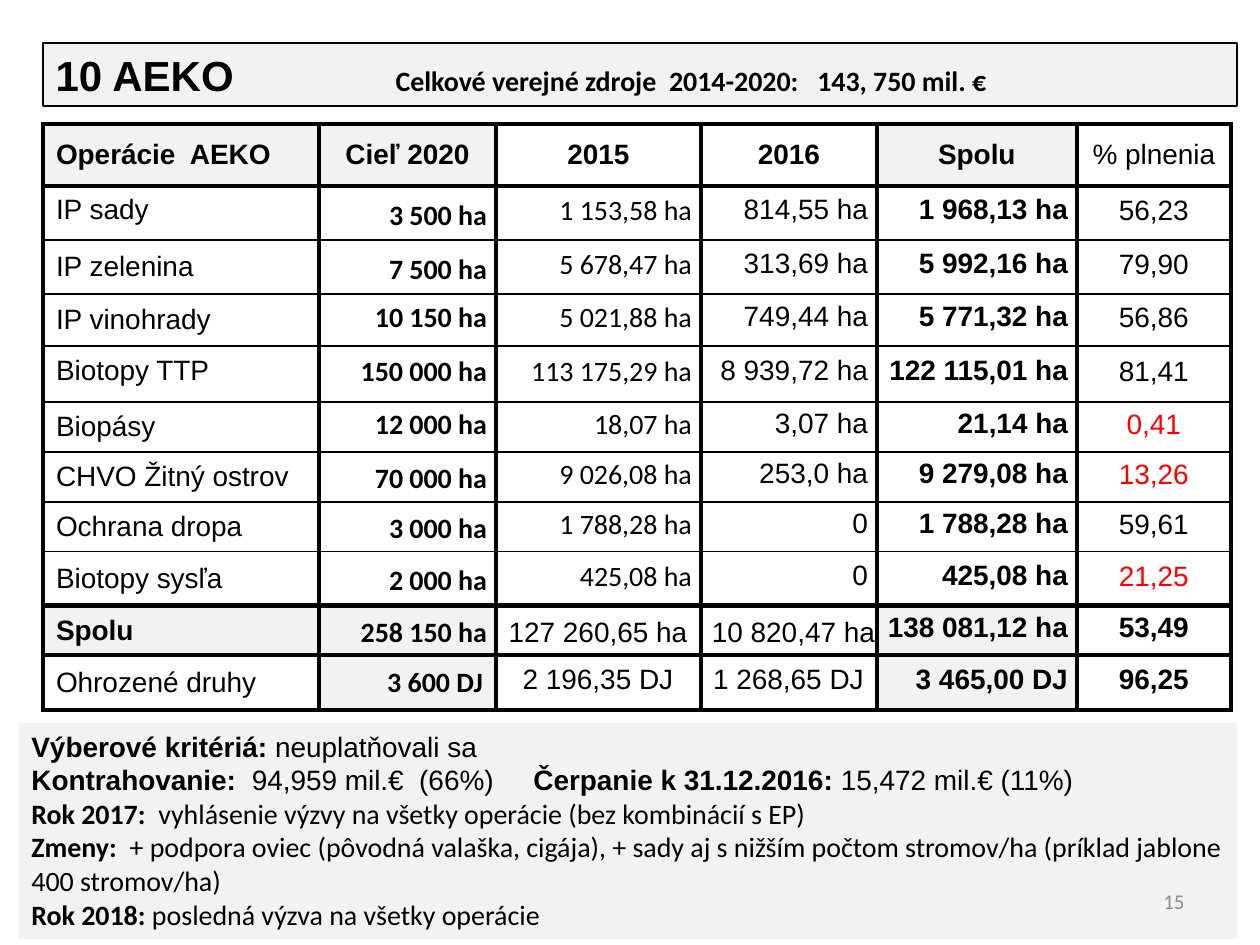
from dataclasses import dataclass, field, replace

from lxml import etree
from pptx import Presentation
from pptx import util as u
from pptx.dml.color import RGBColor
from pptx.enum import shapes, text
from pptx.oxml.ns import qn

EMU_PER_PX = 914400 / 126
COLORS = {"ink": "000000", "panel": "F2F2F2", "alert": "FF0000", "muted": "8C8C8C"}
LEFT, CENTER, RIGHT = text.PP_ALIGN.LEFT, text.PP_ALIGN.CENTER, text.PP_ALIGN.RIGHT
TOP, MIDDLE = text.MSO_ANCHOR.TOP, text.MSO_ANCHOR.MIDDLE

WIDE = (13, 6, 13, 6)  # cell margins: left, top, right, bottom
NARROW = (8, 5, 9, 5)
THIN = (1, 1, 1, 0)


@dataclass(frozen=True)
class Style:
    align: int = LEFT
    font: str = "Arial"
    bold: bool = False
    spacing: float = 1.0
    before: float = 3.2
    margins: tuple = WIDE
    color: str = "ink"
    fill: str = ""


@dataclass(frozen=True)
class Row:
    height: int
    cells: tuple
    changes: dict = field(default_factory=dict)  # column -> style overrides


COLUMN_WIDTHS = (276, 177, 205, 176, 200, 154)
HEADER = Style(CENTER, bold=True)
HEADER_STYLES = (replace(HEADER, align=LEFT, fill="panel"), replace(HEADER, fill="panel"),
                 HEADER, HEADER, replace(HEADER, fill="panel"), replace(HEADER, bold=False))
AMOUNT = Style(RIGHT, spacing=0.75, before=4.5, margins=NARROW)
BODY_STYLES = (
    Style(),
    replace(AMOUNT, font="Calibri", bold=True, spacing=1.15),
    replace(AMOUNT, font="Calibri"),
    AMOUNT,
    replace(AMOUNT, bold=True, before=3.2),
    replace(AMOUNT, align=CENTER, margins=THIN),
)
TIGHT = {"spacing": 0.75}
ALERT = {"color": "alert"}
PANEL = {"fill": "panel"}
TOTAL = {"align": CENTER, "spacing": 1.15, "before": 0}

HEADER_ROW = Row(62, ("Operácie  AEKO", "Cieľ 2020", "2015", "2016", "Spolu", "% plnenia"))
BODY_ROWS = (
    Row(54, ("IP sady", "3 500 ha", "1 153,58 ha", "814,55 ha", "1 968,13 ha", "56,23"),
        {0: TIGHT}),
    Row(54, ("IP zelenina", "7 500 ha", "5 678,47 ha", "313,69 ha", "5 992,16 ha", "79,90")),
    Row(52, ("IP vinohrady", "10 150 ha", "5 021,88 ha", "749,44 ha", "5 771,32 ha", "56,86"),
        {1: TIGHT}),
    Row(56, ("Biotopy TTP", "150 000 ha", "113 175,29 ha", "8 939,72 ha", "122 115,01 ha",
             "81,41"), {0: TIGHT, 1: TIGHT}),
    Row(50, ("Biopásy", "12 000 ha", "18,07 ha", "3,07 ha", "21,14 ha", "0,41"),
        {1: TIGHT, 5: ALERT}),
    Row(50, ("CHVO Žitný ostrov", "70 000 ha", "9 026,08 ha", "253,0 ha", "9 279,08 ha",
             "13,26"), {5: ALERT}),
    Row(50, ("Ochrana dropa", "3 000 ha", "1 788,28 ha", "0", "1 788,28 ha", "59,61")),
    Row(54, ("Biotopy sysľa", "2 000 ha", "425,08 ha", "0", "425,08 ha", "21,25"), {5: ALERT}),
    Row(48, ("Spolu", "258 150 ha", "127 260,65 ha", "10 820,47 ha", "138 081,12 ha", "53,49"),
        {0: {"bold": True, **PANEL}, 1: PANEL, 2: {"font": "Arial", **TOTAL},
         3: {"margins": (9, 0, 0, 0), **TOTAL}, 4: PANEL, 5: {"bold": True}}),
    Row(55, ("Ohrozené druhy", "3 600 DJ", "2 196,35 DJ", "1 268,65 DJ", "3 465,00 DJ", "96,25"),
        {1: {"spacing": 1.0, "before": 3.2, "margins": WIDE, **PANEL},
         2: {"font": "Arial", "align": CENTER}, 3: {"align": CENTER}, 4: PANEL,
         5: {"bold": True, "before": 3.2, "margins": WIDE}}),
)
SIDE_LINE = 2.25
ROW_LINES = (2.25, 2.25, *[1] * 7, 3, 3, 3)  # horizontal rules, top to bottom

# Each paragraph: font, then (text, bold) runs
NOTES = (
    ("Arial", (("Výberové kritériá: ", True), ("neuplatňovali sa", False))),
    ("Arial", (("Kontrahovanie:  ", True), ("94,959 mil.€  (66%)\t", False),
               ("Čerpanie k 31.12.2016: ", True), ("15,472 mil.€ (11%)", False))),
    ("Calibri", (("Rok 2017:  ", True),
                 ("vyhlásenie výzvy na všetky operácie (bez kombinácií s EP)", False))),
    ("Calibri", (("Zmeny:", True),
                 ("  + podpora oviec (pôvodná valaška, cigája), + sady aj s nižším počtom "
                  "stromov/ha (príklad jablone 400 stromov/ha)", False))),
    ("Calibri", (("Rok 2018: ", True), ("posledná výzva na všetky operácie", False))),
)


def px(n: int) -> int:
    return round(n * EMU_PER_PX)


def rgb(name: str) -> RGBColor:
    return RGBColor.from_string(COLORS[name])


def add_run(p, content: str, *, size: int = 16, font: str = "Arial", bold: bool = False,
            color: str = "ink") -> None:
    r = p.add_run()
    r.text = content
    r.font.size, r.font.name, r.font.bold = u.Pt(size), font, bold
    r.font.color.rgb = rgb(color)


def add_tab_stop(p, position: int) -> None:
    tabs = etree.SubElement(p._p.get_or_add_pPr(), qn("a:tabLst"))
    etree.SubElement(tabs, qn("a:tab"), pos=str(px(position)), algn="l")


def place(sp, left: int, top: int, width: int, height: int) -> None:
    sp.left, sp.top, sp.width, sp.height = map(px, (left, top, width, height))


def setup_frame(tf, anchor: int) -> None:
    tf.word_wrap = True
    tf.auto_size = text.MSO_AUTO_SIZE.NONE
    tf.vertical_anchor = anchor


def set_borders(cell, **widths: float) -> None:
    """Draw the L, R, T and B edges; must come before the cell's fill."""
    props = cell._tc.get_or_add_tcPr()
    for side, width in widths.items():
        line = etree.SubElement(props, qn(f"a:ln{side}"), w=str(u.Pt(width)))
        fill = etree.SubElement(line, qn("a:solidFill"))
        etree.SubElement(fill, qn("a:srgbClr"), val=COLORS["ink"])


def fill_cell(cell, content: str, style: Style, top: float, bottom: float) -> None:
    set_borders(cell, L=SIDE_LINE, R=SIDE_LINE, T=top, B=bottom)
    if style.fill:
        cell.fill.solid()
        cell.fill.fore_color.rgb = rgb(style.fill)
    else:
        cell.fill.background()
    cell.vertical_anchor = MIDDLE
    (cell.margin_left, cell.margin_top,
     cell.margin_right, cell.margin_bottom) = map(px, style.margins)
    p = cell.text_frame.paragraphs[0]
    p.alignment, p.line_spacing = style.align, style.spacing
    p.space_before = u.Pt(style.before)
    add_run(p, content, font=style.font, bold=style.bold, color=style.color)


def add_title(s) -> None:
    sp = s.shapes.title
    place(sp, 43, 43, 1194, 63)
    sp.fill.solid()
    sp.fill.fore_color.rgb = rgb("panel")
    sp.line.color.rgb = rgb("ink")
    sp.line.width = u.Pt(0.75)
    setup_frame(sp.text_frame, TOP)
    p = sp.text_frame.paragraphs[0]
    p.alignment = LEFT
    add_tab_stop(p, 340)
    add_run(p, "10 AEKO\t", size=24, bold=True)
    add_run(p, "Celkové verejné zdroje  2014-2020:   143, 750 mil. €", font="Calibri", bold=True)


def add_operations_table(s) -> None:
    rows = (HEADER_ROW, *BODY_ROWS)
    size = px(sum(COLUMN_WIDTHS)), px(sum(row.height for row in rows))
    table = s.shapes.add_table(len(rows), len(COLUMN_WIDTHS), px(43), px(124), *size).table
    table.first_row = table.horz_banding = False
    for column, width in zip(table.columns, COLUMN_WIDTHS):
        column.width = px(width)
    for i, row in enumerate(rows):
        table.rows[i].height = px(row.height)
        styles = BODY_STYLES if i else HEADER_STYLES
        for j, (content, style) in enumerate(zip(row.cells, styles)):
            style = replace(style, **row.changes.get(j, {}))
            fill_cell(table.cell(i, j), content, style, ROW_LINES[i], ROW_LINES[i + 1])


def add_notes_panel(s) -> None:
    sp = s.shapes.add_shape(shapes.MSO_SHAPE.RECTANGLE, 0, 0, 0, 0)
    place(sp, 19, 723, 1218, 216)
    sp.shadow.inherit = False
    sp.fill.solid()
    sp.fill.fore_color.rgb = rgb("panel")
    sp.line.fill.background()
    tf = sp.text_frame
    setup_frame(tf, TOP)
    for i, (font, runs) in enumerate(NOTES):
        p = tf.add_paragraph() if i else tf.paragraphs[0]
        p.alignment = LEFT
        if any("\t" in content for content, _ in runs):
            add_tab_stop(p, 502)
        for content, bold in runs:
            add_run(p, content, font=font, bold=bold)


def add_page_number(s) -> None:
    sp = s.shapes.add_textbox(0, 0, 0, 0)
    place(sp, 903, 876, 294, 50)
    setup_frame(sp.text_frame, MIDDLE)
    p = sp.text_frame.paragraphs[0]
    p.alignment = RIGHT
    add_run(p, "15", size=12, font="Calibri", color="muted")


def main() -> None:
    prs = Presentation()
    prs.slide_width, prs.slide_height = px(1260), px(945)
    s = prs.slides.add_slide(prs.slide_layouts[5])
    add_title(s)
    add_operations_table(s)
    add_notes_panel(s)
    add_page_number(s)
    prs.save("out.pptx")


if __name__ == "__main__":
    main()
